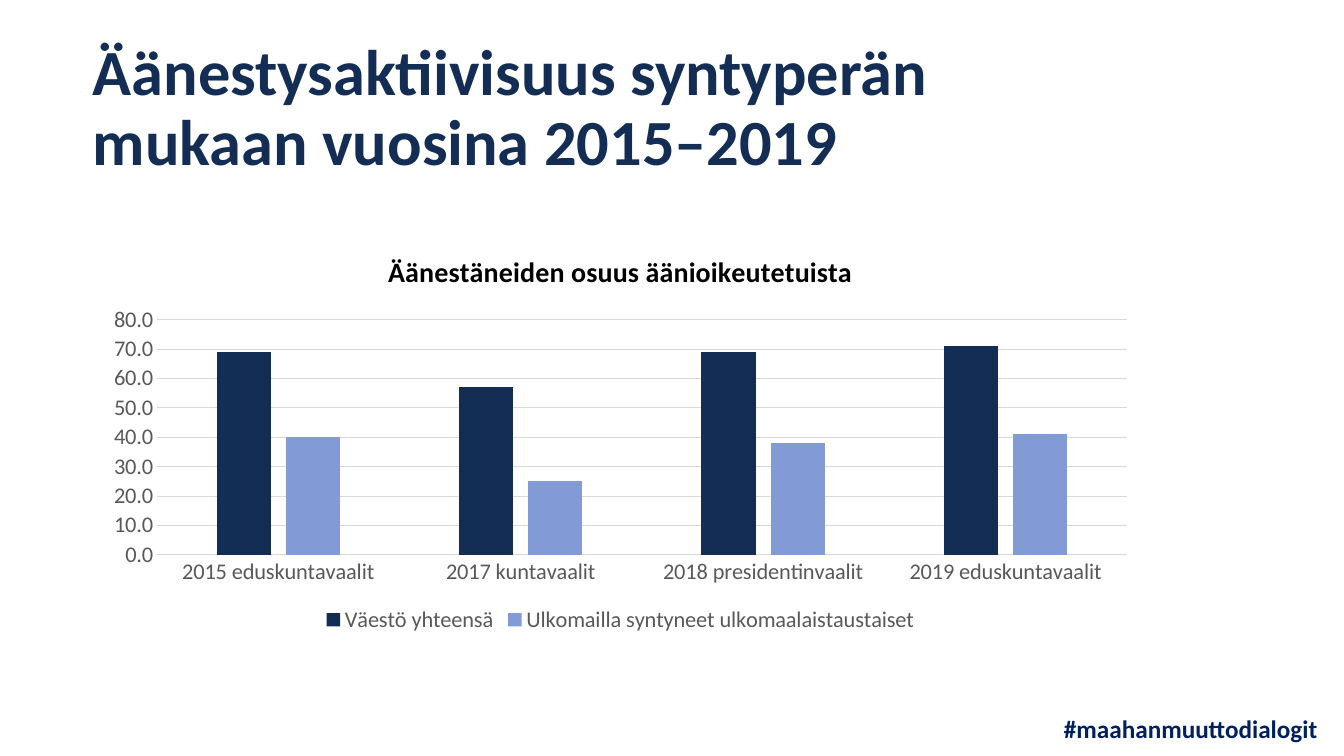
from pptx import Presentation
from pptx.chart.data import CategoryChartData
from pptx.dml.color import RGBColor
from pptx.enum.chart import XL_CHART_TYPE, XL_LEGEND_POSITION, XL_TICK_MARK
from pptx.enum.text import MSO_ANCHOR
from pptx.util import Pt

CLUSTERED = XL_CHART_TYPE.COLUMN_CLUSTERED
LEGEND_BOTTOM = XL_LEGEND_POSITION.BOTTOM
NO_TICK = XL_TICK_MARK.NONE
TOP, BOTTOM = MSO_ANCHOR.TOP, MSO_ANCHOR.BOTTOM

SLIDE_WIDTH, SLIDE_HEIGHT = 1344, 756
EMU_PER_PX = 12192000 / SLIDE_WIDTH
FONT = "Calibri"
NAVY, GREY, RULE = "142D55", "595959", "D9D9D9"

ELECTIONS = ["2015 eduskuntavaalit", "2017 kuntavaalit",
             "2018 presidentinvaalit", "2019 eduskuntavaalit"]
TURNOUT = [
    ("Väestö yhteensä", [69, 57, 69, 71], NAVY),
    ("Ulkomailla syntyneet ulkomaalaistaustaiset", [40, 25, 38, 41], "829BD7"),
]


def px(length):
    """Turn a length in px into EMU."""
    return round(length * EMU_PER_PX)


def color(value):
    """Turn a hex string into a colour."""
    return RGBColor.from_string(value)


def style_font(font, size, value, bold=False):
    """Set typeface, size, colour and weight."""
    font.name, font.size, font.bold = FONT, Pt(size), bold
    font.color.rgb = color(value)


def style_line(line, value):
    """Draw a thin line in the given colour."""
    line.color.rgb = color(value)
    line.width = Pt(0.75)


def add_bold_text(slide, box, text, size, value, spacing, anchor, wrap):
    """Place one bold paragraph in a box without margins."""
    frame = slide.shapes.add_textbox(*map(px, box)).text_frame
    frame.margin_left = frame.margin_top = frame.margin_right = frame.margin_bottom = 0
    frame.word_wrap, frame.vertical_anchor = wrap, anchor
    paragraph = frame.paragraphs[0]
    paragraph.text, paragraph.line_spacing = text, spacing
    style_font(paragraph.font, size, value, True)


def add_turnout_chart(slide, box):
    """Place the clustered column chart of turnout by election."""
    data = CategoryChartData(number_format="0.0")
    data.categories = ELECTIONS
    for name, values, _ in TURNOUT:
        data.add_series(name, values)
    chart = slide.shapes.add_chart(CLUSTERED, *map(px, box), data).chart
    style_font(chart.font, 10, "000000")

    chart.has_title = True
    heading = chart.chart_title.text_frame.paragraphs[0]
    heading.text = "Äänestäneiden osuus äänioikeutetuista"
    style_font(heading.font, 20, "000000", True)
    chart.chart_title.include_in_layout = False

    chart.has_legend = True
    chart.legend.position = LEGEND_BOTTOM
    chart.legend.include_in_layout = False
    style_font(chart.legend.font, 16, GREY)

    for axis in (chart.category_axis, chart.value_axis):
        axis.major_tick_mark = axis.minor_tick_mark = NO_TICK
        style_font(axis.tick_labels.font, 16, GREY)
    style_line(chart.category_axis.format.line, RULE)
    value_axis = chart.value_axis
    value_axis.minimum_scale, value_axis.maximum_scale = 0, 80
    value_axis.major_unit = 10
    value_axis.format.line.fill.background()
    style_line(value_axis.major_gridlines.format.line, RULE)
    value_axis.tick_labels.number_format = "0.0"
    value_axis.tick_labels.number_format_is_linked = False

    plot = chart.plots[0]
    plot.gap_width, plot.overlap, plot.vary_by_categories = 219, -27, False
    for series, (_, _, fill) in zip(plot.series, TURNOUT):
        series.format.fill.solid()
        series.format.fill.fore_color.rgb = color(fill)


def main():
    """Build and save the slide."""
    presentation = Presentation()
    presentation.slide_width, presentation.slide_height = px(SLIDE_WIDTH), px(SLIDE_HEIGHT)
    slide = presentation.slides.add_slide(presentation.slide_layouts[6])
    add_bold_text(slide, (1064, 710, 265, 23), "#maahanmuuttodialogit",
                  18, "002060", 1.1, TOP, False)
    add_bold_text(slide, (93, 42, 1055, 137),
                  "Äänestysaktiivisuus syntyperän mukaan vuosina 2015–2019",
                  46, NAVY, 0.9, BOTTOM, True)
    add_turnout_chart(slide, (93, 233, 1055, 405))
    presentation.save("out.pptx")


if __name__ == "__main__":
    main()
